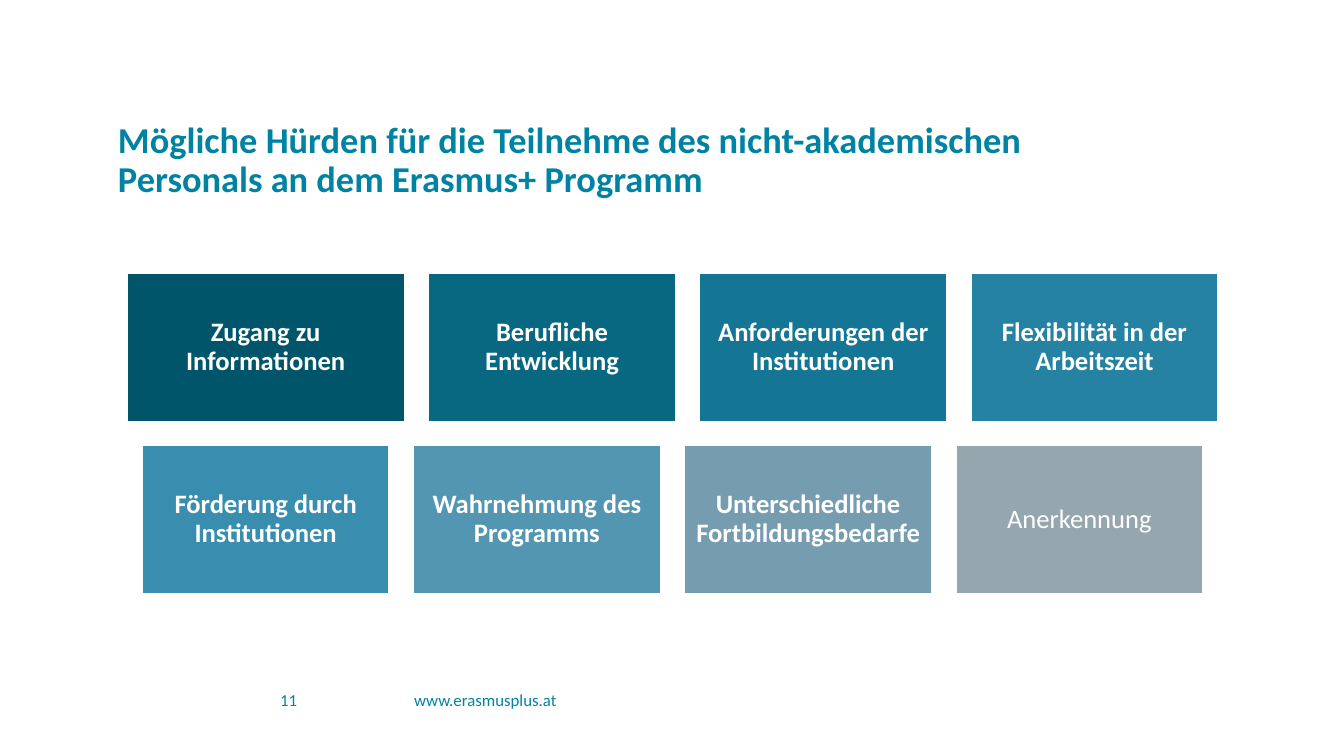
import pptx
import pptx.dml.color
import pptx.enum.shapes
import pptx.enum.text
import pptx.util

Inches = pptx.util.Inches
RGBColor = pptx.dml.color.RGBColor
Align = pptx.enum.text.PP_ALIGN
Anchor = pptx.enum.text.MSO_ANCHOR

TEAL = RGBColor(0x00, 0x83, 0xA3)
WHITE = RGBColor(0xFF, 0xFF, 0xFF)

TILE_WIDTH, TILE_HEIGHT, TILE_GAP = 2.45, 1.47, 0.24
FIRST_TILE_WIDTH = 2.75

# Each tile: text, fill, bold
UPPER_HURDLES = [
    ("Zugang zu Informationen", RGBColor(0x00, 0x55, 0x6A), True),
    ("Berufliche Entwicklung", RGBColor(0x08, 0x67, 0x81), True),
    ("Anforderungen der Institutionen", RGBColor(0x15, 0x75, 0x94), True),
    ("Flexibilität in der Arbeitszeit", RGBColor(0x25, 0x82, 0xA3), True),
]
LOWER_HURDLES = [
    ("Förderung durch Institutionen", RGBColor(0x39, 0x8D, 0xAE), True),
    ("Wahrnehmung des Programms", RGBColor(0x53, 0x96, 0xB2), True),
    ("Unterschiedliche Fortbildungsbedarfe", RGBColor(0x76, 0x9C, 0xAF), True),
    ("Anerkennung", RGBColor(0x95, 0xA6, 0xAF), False),
]


def write_text(shape, text, size, color=TEAL, bold=False, align=Align.LEFT,
               anchor=Anchor.TOP, line_spacing=1.0, inset=None):
    frame = shape.text_frame
    frame.word_wrap = True
    frame.auto_size = pptx.enum.text.MSO_AUTO_SIZE.NONE
    frame.vertical_anchor = anchor
    if inset is not None:
        frame.margin_left = frame.margin_right = Inches(inset)
        frame.margin_top = frame.margin_bottom = Inches(inset)
    para = frame.paragraphs[0]
    para.alignment = align
    para.line_spacing = line_spacing
    span = para.add_run()
    span.text = text
    span.font.name = "Calibri"
    span.font.size = pptx.util.Pt(size)
    span.font.bold = bold
    span.font.color.rgb = color


def add_title(slide, left, top, width, height):
    title = slide.shapes.title
    title.left, title.top = Inches(left), Inches(top)
    title.width, title.height = Inches(width), Inches(height)
    write_text(title, "Mögliche Hürden für die Teilnehme des nicht-akademischen "
               "Personals an dem Erasmus+ Programm", 26, bold=True,
               anchor=Anchor.MIDDLE, line_spacing=0.9)


def add_tile(slide, left, top, width, text, fill, bold):
    tile = slide.shapes.add_shape(
        pptx.enum.shapes.MSO_SHAPE.RECTANGLE,
        Inches(left), Inches(top), Inches(width), Inches(TILE_HEIGHT))
    tile.shadow.inherit = False
    tile.fill.solid()
    tile.fill.fore_color.rgb = fill
    tile.line.color.rgb = WHITE
    tile.line.width = pptx.util.Pt(1)
    write_text(tile, text, 19, color=WHITE, bold=bold, align=Align.CENTER,
               anchor=Anchor.MIDDLE, line_spacing=0.9, inset=0.08)


def add_tile_row(slide, left, top, hurdles, first_width=TILE_WIDTH):
    width = first_width
    for text, fill, bold in hurdles:
        add_tile(slide, left, top, width, text, fill, bold)
        left += width + TILE_GAP
        width = TILE_WIDTH


def add_footer(slide, left, top, height):
    """Place the web address and the page number, which starts at left."""
    for text, offset, width, align in [
            ("www.erasmusplus.at", 0.53, 2.41, Align.RIGHT),
            ("11", 0, 0.81, Align.LEFT)]:
        box = slide.shapes.add_textbox(
            Inches(left + offset), Inches(top), Inches(width), Inches(height))
        write_text(box, text, 12, align=align)


def main():
    deck = pptx.Presentation()
    deck.slide_width, deck.slide_height = Inches(13.33), Inches(7.5)
    slide = deck.slides.add_slide(deck.slide_layouts.get_by_name("Title Only"))
    add_title(slide, 1.07, 1.14, 10.53, 0.92)
    add_footer(slide, 2.68, 6.79, 0.4)
    upper_top = 2.71
    add_tile_row(slide, 1.26, upper_top, UPPER_HURDLES, FIRST_TILE_WIDTH)
    add_tile_row(slide, 1.41, upper_top + TILE_HEIGHT + TILE_GAP, LOWER_HURDLES)
    deck.save("out.pptx")


if __name__ == "__main__":
    main()
